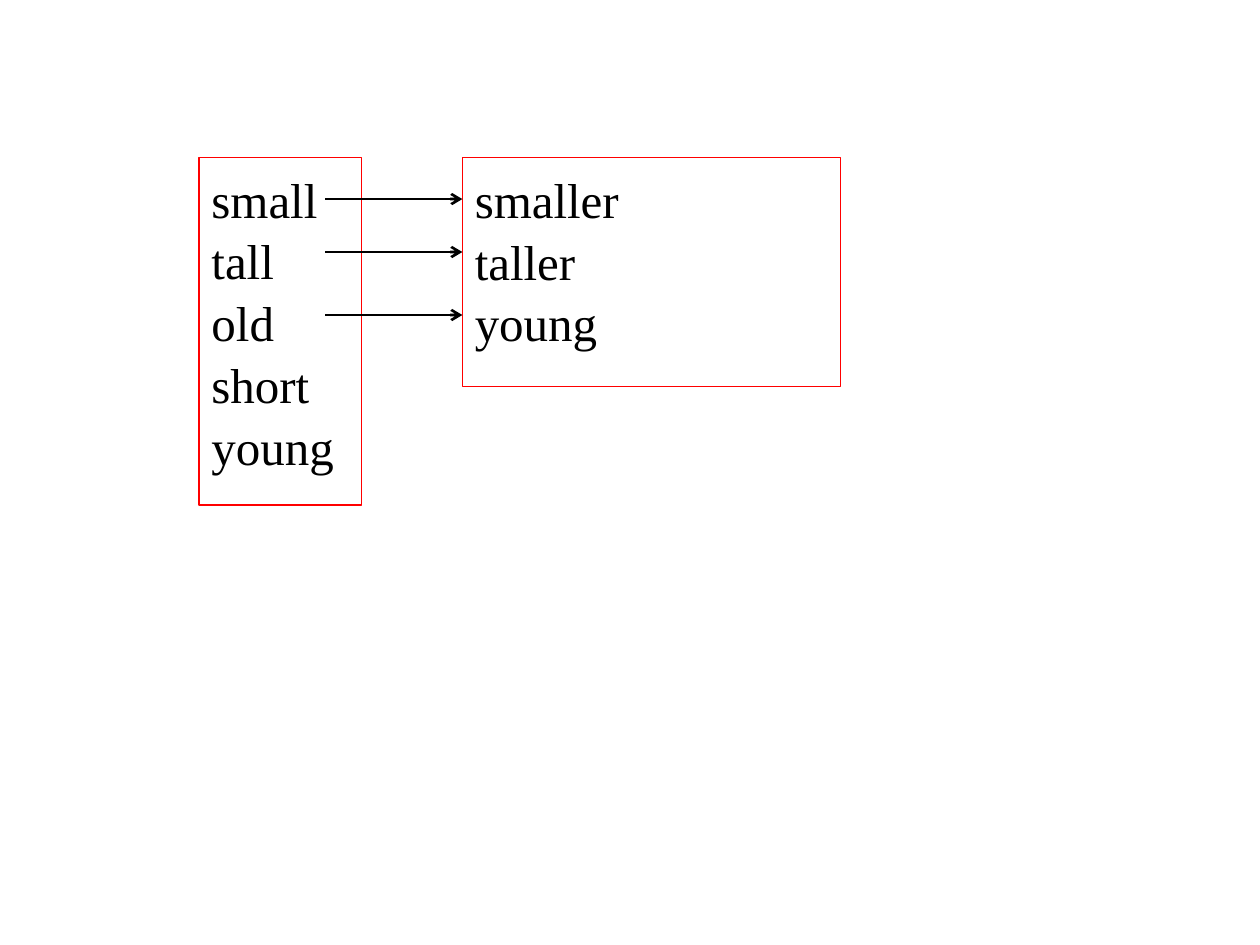
from pptx import Presentation
from pptx.dml.color import RGBColor
from pptx.enum.shapes import MSO_CONNECTOR as Connector, MSO_SHAPE as Shape
from pptx.enum.text import MSO_ANCHOR as Anchor, PP_ALIGN as Align
from pptx.oxml.ns import qn
from pptx.util import Inches, Pt
from lxml.etree import SubElement

FONT = "Times New Roman"
BLACK, RED = "000000", "FF0000"
TOP = 1.25
ADJECTIVE_LEFT, COMPARATIVE_LEFT = 1.58, 3.67
ARROW_LEFT = 2.58
ARROW_ROWS = (1.58, 2, 2.5)


def color(value):
    return RGBColor.from_string(value)


def add_word_box(slide, left, width, height, words):
    """Add a red outlined box with one word in each paragraph."""
    box = slide.shapes.add_shape(
        Shape.RECTANGLE, Inches(left), Inches(TOP), Inches(width), Inches(height))
    box.shadow.inherit = False
    box.fill.background()
    box.line.color.rgb = color(RED)
    box.line.width = Pt(0.75)

    frame = box.text_frame
    frame.word_wrap = True
    frame.vertical_anchor = Anchor.TOP
    frame.margin_top = Inches(0.07)
    for index, word in enumerate(words):
        paragraph = frame.add_paragraph() if index else frame.paragraphs[0]
        paragraph.alignment = Align.LEFT
        paragraph.line_spacing = 1.05
        run = paragraph.add_run()
        run.text = word
        run.font.name = FONT
        run.font.size = Pt(28)
        run.font.color.rgb = color(BLACK)


def add_arrow(slide, y):
    """Add a level arrow from the adjectives to the comparatives."""
    arrow = slide.shapes.add_connector(
        Connector.STRAIGHT, Inches(ARROW_LEFT), Inches(y),
        Inches(COMPARATIVE_LEFT), Inches(y))
    arrow.line.color.rgb = color(BLACK)
    arrow.line.width = Pt(1.5)
    properties = arrow._element.spPr
    SubElement(properties.find(qn("a:ln")), qn("a:tailEnd"), type="arrow")
    SubElement(properties, qn("a:effectLst"))


def main():
    presentation = Presentation()
    presentation.slide_width = Inches(10)
    presentation.slide_height = Inches(7.5)
    slide = presentation.slides.add_slide(presentation.slide_layouts[6])

    # Word lists
    add_word_box(slide, ADJECTIVE_LEFT, 1.29, 2.76,
                 ("small", "tall", "old", "short", "young"))
    add_word_box(slide, COMPARATIVE_LEFT, 3, 1.82,
                 ("smaller", "taller", "young"))

    # Arrows between the lists
    for y in ARROW_ROWS:
        add_arrow(slide, y)

    presentation.save("out.pptx")


if __name__ == "__main__":
    main()
